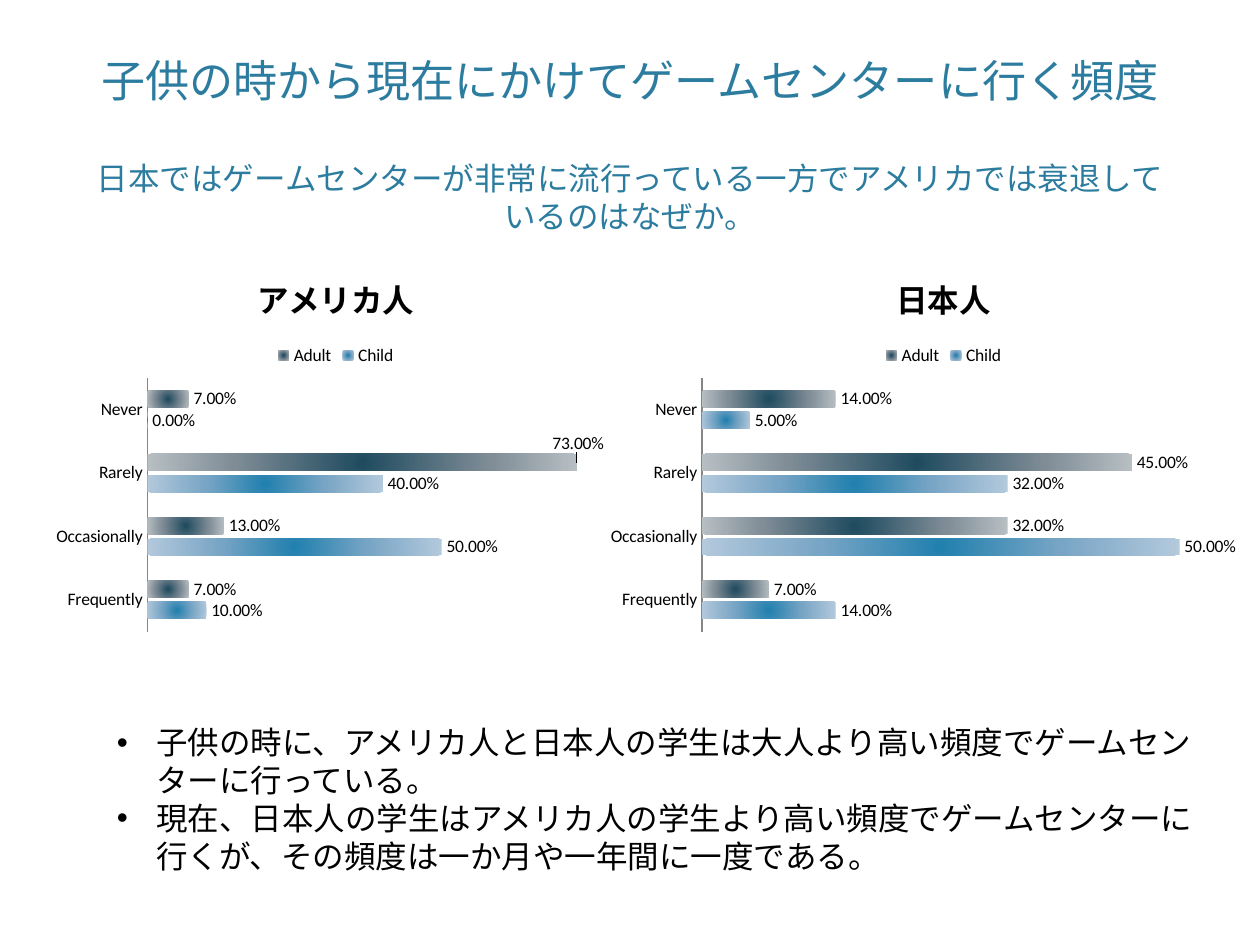
from lxml import etree
from pptx import Presentation, util as u
from pptx.chart.data import CategoryChartData
from pptx.dml.color import RGBColor
from pptx.enum import chart as ch, text as t
from pptx.oxml import parse_xml
from pptx.oxml.ns import nsdecls, qn

WIDTH, HEIGHT = u.Inches(10), u.Inches(7.5)
FONT = "Calibri"
BLUE, SLATE, BLACK = "2C7C9F", "244A58", "000000"
FREQUENCIES = ["Frequently", "Occasionally", "Rarely", "Never"]
GRADIENTS = {
    "Child": [(0, "2180AE"), (50, "78A5C5"), (100, "B3C9DC")],
    "Adult": [(0, "1F4B5F"), (60, "808D97"), (100, "B7BFC3")],
}


def color(hex_value):
    return RGBColor.from_string(hex_value)


def style(font, size, hex_value, bold=False):
    font.name, font.size, font.bold = FONT, u.Pt(size), bold
    font.color.rgb = color(hex_value)


def place(box):
    left, top, width, height = box
    return [int(left * WIDTH), int(top * HEIGHT), int(width * WIDTH), int(height * HEIGHT)]


def add_frame(slide, box, anchor):
    frame = slide.shapes.add_textbox(*place(box)).text_frame
    frame.word_wrap = True
    frame.vertical_anchor = anchor
    return frame


def heading(slide, box, question, subtitle):
    frame = add_frame(slide, box, t.MSO_ANCHOR.BOTTOM)
    lines = [frame.paragraphs[0], frame.add_paragraph()]
    for line, words, size in zip(lines, (question, subtitle), (25.2, 18)):
        line.text = words
        line.alignment = t.PP_ALIGN.CENTER
        style(line.runs[0].font, size, BLUE)
    lines[1].space_before = u.Pt(30)


def findings(slide, box, points):
    frame = add_frame(slide, box, t.MSO_ANCHOR.TOP)
    frame.text = "\n".join(points)
    for point in frame.paragraphs:
        style(point.runs[0].font, 18, BLACK)
        props = point._p.get_or_add_pPr()
        indent = u.Inches(0.31)
        props.set("marL", str(indent))
        props.set("indent", str(-indent))
        etree.SubElement(props, qn("a:buFont")).set("typeface", "Arial")
        etree.SubElement(props, qn("a:buChar")).set("char", "•")


def layout_xml(**settings):
    parts = "".join(f'<c:{name} val="{value}"/>' for name, value in settings.items())
    return parse_xml(f'<c:layout {nsdecls("c")}><c:manualLayout>{parts}</c:manualLayout></c:layout>')


def set_plot_area(chart, x, y, w, h):
    area = chart._chartSpace.chart.plotArea
    for old in area.findall(qn("c:layout")):
        area.remove(old)
    area.insert(0, layout_xml(layoutTarget="inner", xMode="edge", yMode="edge", x=x, y=y, w=w, h=h))


def fill_radial(series):
    stops = "".join(
        f'<a:gs pos="{share * 1000}"><a:srgbClr val="{shade}"/></a:gs>'
        for share, shade in GRADIENTS[series.name])
    props = series.format._element if hasattr(series.format, "_element") else series._element.get_or_add_spPr()
    props = series._element.get_or_add_spPr()
    props.insert(0, parse_xml(
        f'<a:gradFill {nsdecls("a")} rotWithShape="1"><a:gsLst>{stops}</a:gsLst>'
        '<a:path path="circle"><a:fillToRect l="50000" t="50000" r="50000" b="50000"/></a:path>'
        '</a:gradFill>'))


def label_bars(series):
    labels = series.data_labels
    labels.show_value = True
    labels.number_format, labels.number_format_is_linked = "0.00%", False
    labels.position = ch.XL_LABEL_POSITION.OUTSIDE_END
    style(labels.font, 10, BLACK)


def raise_label(series, index):
    label = series.points[index].data_label
    label.position = ch.XL_LABEL_POSITION.OUTSIDE_END
    label._dLbl.find(qn("c:idx")).addnext(layout_xml(x=-0.05, y=-0.05))


def frequency_chart(slide, box, group, child, adult, maximum, plot_x, plot_width):
    data = CategoryChartData(number_format="0.00%")
    data.categories = FREQUENCIES
    data.add_series("Child", child)
    data.add_series("Adult", adult)
    chart = slide.shapes.add_chart(ch.XL_CHART_TYPE.BAR_CLUSTERED, *place(box), data).chart
    style(chart.font, 10, BLACK)

    chart.has_title = True
    title = chart.chart_title.text_frame
    title.text = group
    style(title.paragraphs[0].runs[0].font, 18, BLACK, bold=True)
    chart.has_legend = True
    chart.legend.position = ch.XL_LEGEND_POSITION.TOP
    chart.legend.include_in_layout = False

    values, categories = chart.value_axis, chart.category_axis
    values.minimum_scale, values.maximum_scale = 0, maximum
    values.has_major_gridlines = False
    values.visible = False
    categories.major_tick_mark = ch.XL_TICK_MARK.NONE
    categories.format.line.color.rgb = color("868686")

    plot = chart.plots[0]
    plot.gap_width, plot.overlap = 150, -25
    plot.vary_by_categories = False
    for series in plot.series:
        fill_radial(series)
        label_bars(series)
    set_plot_area(chart, plot_x, 0.325, plot_width, 0.655)
    return plot


def main():
    deck = Presentation()
    deck.slide_width, deck.slide_height = WIDTH, HEIGHT
    slide = deck.slides.add_slide(deck.slide_layouts[6])
    heading(slide, (0.06, 0.06, 0.88, 0.195),
            "子供の時から現在にかけてゲームセンターに行く頻度",
            "日本ではゲームセンターが非常に流行っている一方でアメリカでは衰退しているのはなぜか。")
    chart_top, chart_height = 2 / 7.5, 0.41
    frequency_chart(slide, (0.475, chart_top, 0.548, chart_height), "日本人",
                    (0.14, 0.5, 0.32, 0.05), (0.07, 0.32, 0.45, 0.14), 0.6, 0.15, 0.83)
    findings(slide, (0.083, 0.759, 0.875, 0.175), [
        "子供の時に、アメリカ人と日本人の学生は大人より高い頻度でゲームセンターに行っている。",
        "現在、日本人の学生はアメリカ人の学生より高い頻度でゲームセンターに行くが、その頻度は一か月や一年間に一度である。",
    ])
    americans = frequency_chart(slide, (0.033, chart_top, 0.467, chart_height), "アメリカ人",
                                (0.1, 0.5, 0.4, 0), (0.07, 0.13, 0.73, 0.07), 0.8, 0.18, 0.8)
    raise_label(americans.series[1], FREQUENCIES.index("Rarely"))
    deck.save("out.pptx")


if __name__ == "__main__":
    main()
